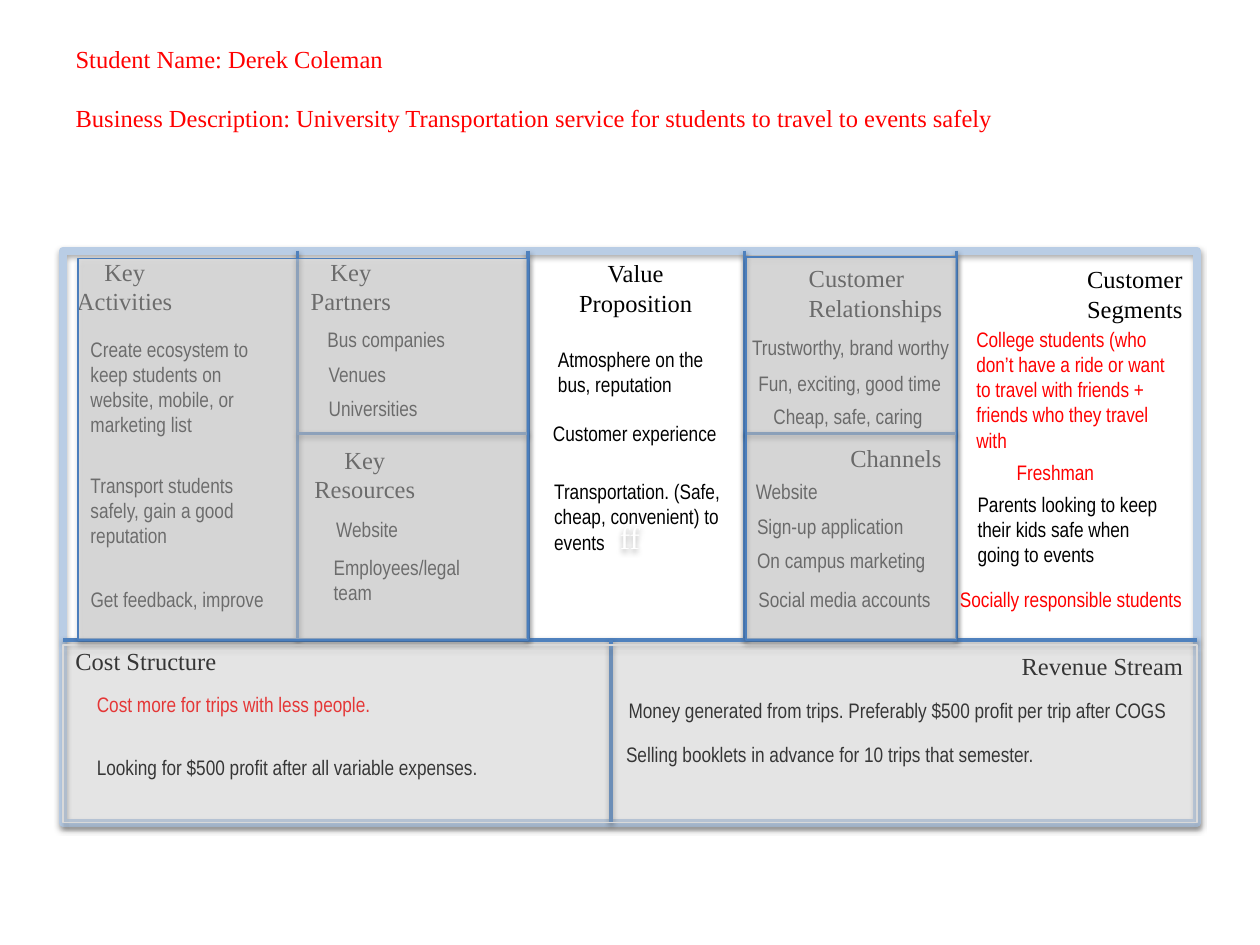
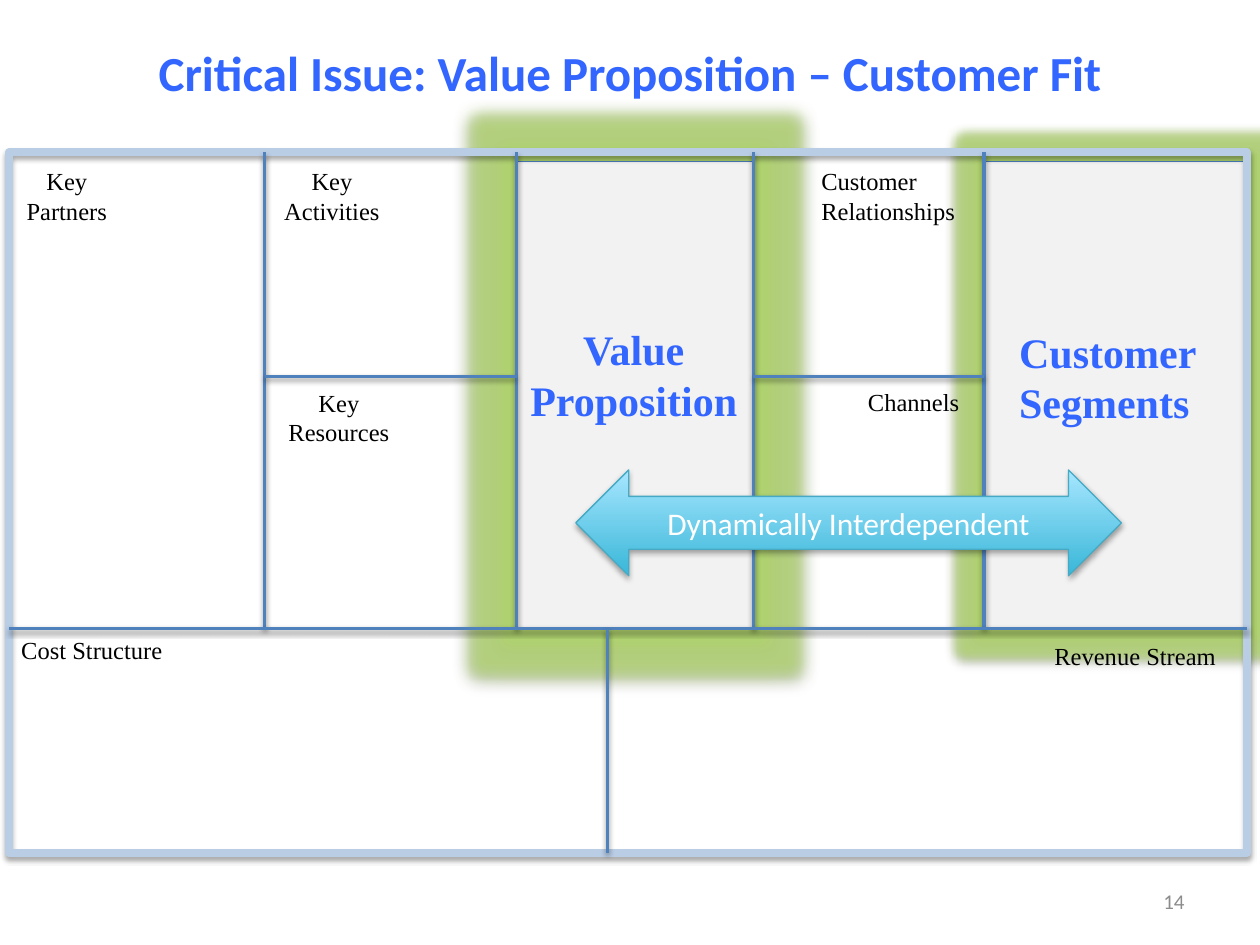
from dataclasses import dataclass
from typing import Any, NamedTuple, Optional

import lxml.etree
import pptx
import pptx.dml.color
import pptx.enum.shapes
import pptx.enum.text
import pptx.oxml.ns
import pptx.util

Inches = pptx.util.Inches
Pt = pptx.util.Pt
qn = pptx.oxml.ns.qn
Align = pptx.enum.text.PP_ALIGN
Anchor = pptx.enum.text.MSO_ANCHOR
AutoSize = pptx.enum.text.MSO_AUTO_SIZE
Preset = pptx.enum.shapes.MSO_SHAPE


@dataclass(frozen=True)
class Theme:
    heading_font: str = "Times New Roman"
    note_font: str = "Arial Narrow"
    title_font: str = "Calibri"
    heading_size: float = 14
    note_size: float = 12
    focus_size: float = 24
    title_size: float = 28
    shape_size: float = 18
    black: str = "000000"
    white: str = "FFFFFF"
    red: str = "FF0000"
    blue: str = "3366FF"
    frame: str = "B9CDE5"
    divider: str = "4F81BD"
    outline: str = "4B7EBC"
    veil: str = "D9D9D9"
    focus_fill: str = "F2F2F2"
    glow: str = "B0D66A"
    arrow_low: str = "39B7D8"
    arrow_high: str = "A7E6FF"
    arrow_line: str = "46AAC5"
    page_number: str = "8C8C8C"


THEME = Theme()


class Box(NamedTuple):
    left: float
    top: float
    width: float
    height: float


class Style(NamedTuple):
    font: str
    size: float
    color: str
    bold: bool = False


HEADING = Style(THEME.heading_font, THEME.heading_size, THEME.black)
FOCUS = Style(THEME.heading_font, THEME.focus_size, THEME.blue, True)
NOTE = Style(THEME.note_font, THEME.note_size, THEME.black)
RED_NOTE = NOTE._replace(color=THEME.red)


class Label(NamedTuple):
    box: Box
    lines: tuple[str, ...]
    style: Style = HEADING
    align: Any = Align.LEFT
    wrap: bool = False


class Shadow(NamedTuple):
    distance: float
    opacity: int


SHAPE_SHADOW = Shadow(1.8, 35)
LINE_SHADOW = Shadow(1.6, 38)


@dataclass(frozen=True)
class Canvas:
    """The nine-block grid: column lines, half-height line, base line."""
    box: Box
    columns: tuple[float, float, float, float]
    middle: float
    base: float
    split: float

    def dividers(self) -> list[tuple[float, float, float, float]]:
        left, top, width, height = self.box
        first, second, third, fourth = self.columns
        return [
            *((column, top, column, self.base) for column in self.columns),
            (left, self.base, left + width, self.base),
            (self.split, self.base, self.split, top + height),
            (first, self.middle, second, self.middle),
            (third, self.middle, fourth, self.middle),
        ]


def rgb(color: str) -> pptx.dml.color.RGBColor:
    return pptx.dml.color.RGBColor.from_string(color)


def lengths(box: Box) -> list[int]:
    return [Inches(value) for value in box]


# Text
def write_lines(frame: Any, lines: tuple[str, ...], style: Style,
                align: Any = Align.LEFT) -> None:
    for index, line in enumerate(lines):
        paragraph = frame.add_paragraph() if index else frame.paragraphs[0]
        paragraph.alignment = align
        run = paragraph.add_run()
        run.text = line
        run.font.name = style.font
        run.font.size = Pt(style.size)
        run.font.bold = style.bold
        run.font.color.rgb = rgb(style.color)


def add_label(slide: Any, label: Label) -> Any:
    shape = slide.shapes.add_textbox(*lengths(label.box))
    frame = shape.text_frame
    frame.word_wrap = label.wrap
    frame.auto_size = AutoSize.SHAPE_TO_FIT_TEXT
    write_lines(frame, label.lines, label.style, label.align)
    return shape


def set_title(slide: Any, box: Box, lines: tuple[str, ...], style: Style,
              align: Any, wrap: bool) -> Any:
    title = slide.shapes.title
    title.left, title.top, title.width, title.height = lengths(box)
    frame = title.text_frame
    frame.word_wrap = wrap
    frame.auto_size = AutoSize.NONE
    frame.vertical_anchor = Anchor.TOP
    write_lines(frame, lines, style, align)
    return title


# Shapes, lines and their effects
def add_color(parent: Any, color: str, opacity: int) -> None:
    node = lxml.etree.SubElement(parent, qn("a:srgbClr"), val=color)
    lxml.etree.SubElement(node, qn("a:alpha"), val=str(opacity * 1000))


def add_effects(shape: Any, shadow: Shadow, glow: float = 0) -> None:
    effects = lxml.etree.SubElement(shape.element.spPr, qn("a:effectLst"))
    if glow:
        node = lxml.etree.SubElement(effects, qn("a:glow"), rad=str(Pt(glow)))
        add_color(node, THEME.glow, 75)
    node = lxml.etree.SubElement(
        effects, qn("a:outerShdw"), blurRad=str(Pt(3.1)),
        dist=str(Pt(shadow.distance)), dir="5400000", rotWithShape="0")
    add_color(node, THEME.black, shadow.opacity)


def add_panel(slide: Any, box: Box, fill: Optional[str], line: str,
              line_width: float = 0.75, opacity: int = 100, glow: float = 0) -> Any:
    shape = slide.shapes.add_shape(Preset.RECTANGLE, *lengths(box))
    if fill is None:
        shape.fill.background()
    else:
        shape.fill.solid()
        shape.fill.fore_color.rgb = rgb(fill)
        color = shape.element.spPr.find(qn("a:solidFill")).find(qn("a:srgbClr"))
        lxml.etree.SubElement(color, qn("a:alpha"), val=str(opacity * 1000))
    shape.line.color.rgb = rgb(line)
    shape.line.width = Pt(line_width)
    add_effects(shape, SHAPE_SHADOW, glow)
    return shape


def draw_canvas(slide: Any, canvas: Canvas) -> Any:
    frame = add_panel(slide, canvas.box, None, THEME.frame, 4.5)
    for ends in canvas.dividers():
        divider = slide.shapes.add_connector(
            pptx.enum.shapes.MSO_CONNECTOR.STRAIGHT, *(Inches(end) for end in ends))
        divider.line.color.rgb = rgb(THEME.divider)
        divider.line.width = Pt(2)
        add_effects(divider, LINE_SHADOW)
    return frame


# Slide 1: the filled-in canvas
STUDENT_CANVAS = Canvas(Box(0.5, 1.99, 9, 4.54), (2.36, 4.19, 5.91, 7.59), 3.44, 5.08, 4.85)

STUDENT_HEADINGS = [
    Label(Box(0.5, 1.99, 0.98, 0.57), ("Key", "Activities"), align=Align.CENTER),
    Label(Box(2.36, 1.99, 0.85, 0.57), ("Key", "Partners"), align=Align.CENTER),
    Label(Box(2.39, 3.48, 1.01, 0.57), ("Key", "Resources"), align=Align.CENTER),
    Label(Box(4.49, 2, 1.11, 0.57), ("Value", "Proposition"), align=Align.CENTER),
    Label(Box(6.32, 2.04, 1.27, 0.57), ("Customer", "Relationships")),
    Label(Box(6.65, 3.47, 0.93, 0.34), ("Channels",)),
    Label(Box(8.53, 2.05, 0.97, 0.57), ("Customer", "Segments")),
    Label(Box(8.01, 5.12, 1.49, 0.34), ("Revenue Stream",)),
    Label(Box(0.5, 5.08, 1.33, 0.34), ("Cost Structure",)),
]


def note(left: float, top: float, width: float, height: float, text: str,
         style: Style = NOTE, wrap: bool = False) -> Label:
    return Label(Box(left, top, width, height), (text,), style, wrap=wrap)


STUDENT_NOTES = [
    # Key activities
    note(0.62, 2.62, 1.67, 0.91,
         "Create ecosystem to keep students on website, mobile, or marketing list", wrap=True),
    note(0.62, 3.7, 1.56, 0.71, "Transport students safely, gain a good reputation", wrap=True),
    note(0.62, 4.61, 1.59, 0.3, "Get feedback, improve"),
    # Key partners and resources
    note(2.5, 2.54, 1.42, 0.3, "Bus companies", wrap=True),
    note(2.51, 2.82, 1.29, 0.3, "Venues", wrap=True),
    note(2.51, 3.09, 1.35, 0.3, "Universities", wrap=True),
    note(2.57, 4.05, 1.29, 0.3, "Website", wrap=True),
    note(2.55, 4.35, 1.29, 0.5, "Employees/legal team", wrap=True),
    # Value proposition
    note(4.33, 2.7, 1.48, 0.5, "Atmosphere on the bus, reputation", wrap=True),
    note(4.29, 3.29, 1.51, 0.3, "Customer experience"),
    note(4.3, 3.75, 1.54, 0.71, "Transportation. (Safe, cheap, convenient) to events", wrap=True),
    # Customer relationships and channels
    note(5.87, 2.61, 1.78, 0.3, "Trustworthy, brand worthy"),
    note(5.92, 2.89, 1.67, 0.3, "Fun, exciting, good time"),
    note(6.04, 3.15, 1.4, 0.3, "Cheap, safe, caring"),
    note(5.9, 3.75, 0.7, 0.3, "Website"),
    note(5.91, 4.03, 1.38, 0.3, "Sign-up application"),
    note(5.91, 4.3, 1.55, 0.3, "On campus marketing"),
    note(5.92, 4.61, 1.58, 0.3, "Social media accounts"),
    # Customer segments
    note(7.65, 2.54, 1.73, 1.11, "College students (who don’t have a ride or want to travel "
         "with friends + friends who they travel with", RED_NOTE, wrap=True),
    note(7.97, 3.6, 0.82, 0.3, "Freshman", RED_NOTE),
    note(7.66, 3.85, 1.72, 0.71,
         "Parents looking to keep their kids safe when going to events", wrap=True),
    note(7.52, 4.61, 1.98, 0.3, "Socially responsible students", RED_NOTE),
    # Costs and revenue
    note(0.67, 5.44, 4.11, 0.3, "Cost more for trips with less people.", RED_NOTE, wrap=True),
    note(0.67, 5.94, 3.3, 0.3, "Looking for $500 profit after all variable expenses."),
    note(4.89, 5.49, 4.52, 0.3,
         "Money generated from trips. Preferably $500 profit per trip after COGS"),
    note(4.87, 5.84, 3.51, 0.3, "Selling booklets in advance for 10 trips that semester."),
]


def build_student_canvas(slide: Any) -> None:
    title = set_title(
        slide, Box(0.5, 0.3, 9, 1.25),
        ("Student Name: Derek Coleman", "Business Description: University Transportation "
         "service for students to travel to events safely"),
        HEADING._replace(color=THEME.red), Align.LEFT, True)
    title.text_frame.paragraphs[1].space_before = Pt(17)
    frame = draw_canvas(slide, STUDENT_CANVAS)
    frame.text_frame.vertical_anchor = Anchor.MIDDLE
    write_lines(frame.text_frame, ("ff",),
                Style(THEME.heading_font, THEME.shape_size, THEME.white), Align.CENTER)
    for label in STUDENT_HEADINGS + STUDENT_NOTES:
        add_label(slide, label)
    # Veils that dim the blocks outside the focus
    add_panel(slide, Box(0.5, 5.12, 9, 1.41), THEME.veil, THEME.veil, opacity=25)
    add_panel(slide, Box(0.62, 2.05, 3.57, 3.03), THEME.veil, THEME.outline, opacity=50)
    add_panel(slide, Box(5.92, 2.04, 1.67, 3.04), THEME.veil, THEME.outline, opacity=49)


# Slide 2: the fit between value proposition and segments
FIT_CANVAS = Canvas(Box(0.07, 1.21, 9.83, 5.56), (2.1, 4.1, 5.98, 7.81), 2.99, 4.99, 4.82)

FIT_HEADINGS = [
    Label(Box(2.1, 1.27, 1.07, 0.7), ("Key", "Activities"), align=Align.CENTER),
    Label(Box(0.07, 1.27, 0.92, 0.7), ("Key", "Partners"), align=Align.CENTER),
    Label(Box(2.14, 3.03, 1.1, 0.7), ("Key", "Resources"), align=Align.CENTER),
    Label(Box(4.1, 2.52, 1.86, 0.91), ("Value", "Proposition"), FOCUS, Align.CENTER),
    Label(Box(6.42, 1.27, 1.39, 0.7), ("Customer", "Relationships")),
    Label(Box(6.79, 3.02, 1.02, 0.41), ("Channels",)),
    Label(Box(7.99, 2.54, 1.62, 0.91), ("Customer", "Segments"), FOCUS),
    Label(Box(8.27, 5.04, 1.63, 0.41), ("Revenue Stream",)),
    Label(Box(0.07, 4.99, 1.45, 0.41), ("Cost Structure",)),
]


def build_fit(slide: Any) -> None:
    set_title(slide, Box(1.16, 0.29, 7.77, 0.57),
              ("Critical Issue: Value Proposition – Customer Fit",),
              Style(THEME.title_font, THEME.title_size, THEME.blue, True), Align.LEFT, False)
    for left, width, glow in ((7.81, 2.09, 11), (4.1, 1.88, 18)):
        add_panel(slide, Box(left, 1.28, width, 3.71), THEME.focus_fill, THEME.outline, glow=glow)
    draw_canvas(slide, FIT_CANVAS)
    for label in FIT_HEADINGS:
        add_label(slide, label)
    number = add_label(slide, Label(
        Box(7.17, 6.95, 2.33, 0.4), ("14",),
        Style(THEME.title_font, THEME.note_size, THEME.page_number), Align.RIGHT, True))
    number.text_frame.auto_size = AutoSize.NONE
    number.text_frame.vertical_anchor = Anchor.MIDDLE

    # Double arrow linking the two focus blocks
    arrow = slide.shapes.add_shape(Preset.LEFT_RIGHT_ARROW, *lengths(Box(4.57, 3.73, 4.33, 0.84)))
    arrow.fill.gradient()
    arrow.fill.gradient_angle = 90
    for stop, color in zip(arrow.fill.gradient_stops, (THEME.arrow_low, THEME.arrow_high)):
        stop.color.rgb = rgb(color)
    arrow.line.color.rgb = rgb(THEME.arrow_line)
    arrow.line.width = Pt(0.75)
    add_effects(arrow, SHAPE_SHADOW)
    arrow.text_frame.vertical_anchor = Anchor.MIDDLE
    write_lines(arrow.text_frame, ("Dynamically Interdependent",),
                Style(THEME.title_font, THEME.shape_size, THEME.white), Align.CENTER)


def main() -> None:
    presentation = pptx.Presentation()
    presentation.slide_width, presentation.slide_height = Inches(10), Inches(7.5)
    title_only = presentation.slide_layouts[5]
    for build in (build_student_canvas, build_fit):
        build(presentation.slides.add_slide(title_only))
    presentation.save("out.pptx")


if __name__ == "__main__":
    main()
